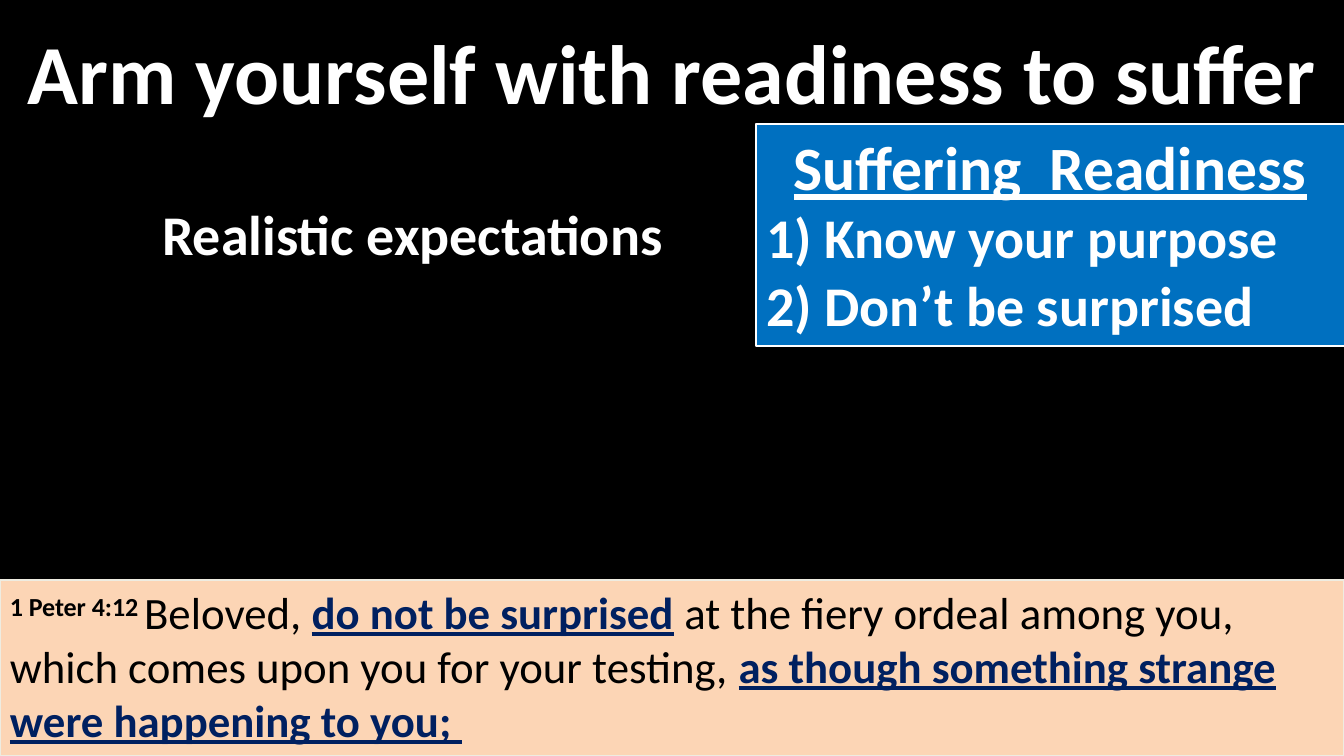
"""Build the slide on readiness to suffer, with its points and Bible verse."""
from dataclasses import dataclass

import pptx
import pptx.dml.color
import pptx.enum.shapes
import pptx.enum.text
import pptx.oxml
import pptx.oxml.ns
import pptx.util

EMU_PER_PX = 914400 / 100.8
FONT = "Calibri"
COLORS = {
    "black": "000000",
    "white": "FFFFFF",
    "navy": "002060",
    "blue": "0070C0",
    "peach": "FCD5B5",
    "cream": "EEECE1",
}
CALLOUT_ADJ = {"adj1": -21900, "adj2": 49600, "adj3": 16700}
ALIGN = pptx.enum.text.PP_ALIGN
ANCHOR = pptx.enum.text.MSO_ANCHOR
SHAPE = pptx.enum.shapes.MSO_SHAPE


@dataclass(frozen=True)
class Run:
    text: str
    size: int
    color: str = "white"
    bold: bool = True
    underline: bool = False
    baseline: int = 0


@dataclass(frozen=True)
class Para:
    runs: tuple[Run, ...]
    align: ALIGN = ALIGN.LEFT


@dataclass(frozen=True)
class Block:
    box: tuple[int, int, int, int]
    paras: tuple[Para, ...]
    anchor: ANCHOR = ANCHOR.TOP
    callout: bool = False
    fill: str = ""
    line: str = ""
    line_width: float = 0


TITLE = Block(
    (0, 29, 1344, 84),
    (Para((Run("Arm yourself with readiness to suffer", 60),), ALIGN.CENTER),),
    ANCHOR.MIDDLE, callout=True,
)
EXPECTATIONS = Block(
    (118, 183, 589, 101),
    (Para((Run("Realistic expectations", 40),), ALIGN.CENTER),),
    ANCHOR.MIDDLE, callout=True,
)
READINESS = Block(
    (756, 124, 589, 222),
    (
        Para((Run("Suffering  Readiness", 44, underline=True),), ALIGN.CENTER),
        Para((Run("1) Know your purpose", 40),)),
        Para((Run("2) Don’t be surprised", 40),)),
    ),
    fill="blue", line="white", line_width=2,
)
VERSE = Block(
    (0, 580, 1344, 176),
    (Para((
        Run("1 Peter 4:12 ", 32, "black", baseline=30000),
        Run("Beloved, ", 32, "black", bold=False),
        Run("do not be surprised", 32, "navy", underline=True),
        Run(" ", 32, "navy"),
        Run("at the fiery ordeal among you, which comes upon you for your testing, ",
            32, "black", bold=False),
        Run("as though something strange were happening to you; ",
            32, "navy", underline=True),
    )),),
    fill="peach", line="cream", line_width=1.5,
)


def px(n: int) -> int:
    """Turn pixels into EMU."""
    return round(n * EMU_PER_PX)


def rgb(name: str) -> pptx.dml.color.RGBColor:
    """Look up a named colour."""
    return pptx.dml.color.RGBColor.from_string(COLORS[name])


def add_run(p, run: Run) -> None:
    """Append one formatted run to a paragraph."""
    r = p.add_run()
    r.text = run.text
    r.font.name = FONT
    r.font.size = pptx.util.Pt(run.size)
    r.font.bold = run.bold
    r.font.underline = run.underline
    r.font.color.rgb = rgb(run.color)
    if run.baseline:
        r.font._element.set("baseline", str(run.baseline))


def set_callout(sp) -> None:
    """Give a shape or placeholder the rounded callout outline."""
    spPr = sp._element.spPr
    for old in spPr.findall(pptx.oxml.ns.qn("a:prstGeom")):
        spPr.remove(old)
    guides = "".join(f'<a:gd name="{name}" fmla="val {value}"/>'
                     for name, value in CALLOUT_ADJ.items())
    spPr.find(pptx.oxml.ns.qn("a:xfrm")).addnext(pptx.oxml.parse_xml(
        f'<a:prstGeom {pptx.oxml.ns.nsdecls("a")} prst="wedgeRoundRectCallout">'
        f"<a:avLst>{guides}</a:avLst></a:prstGeom>"))


def format_block(sp, block: Block) -> None:
    """Place a shape, then set its outline, fill, line and text."""
    sp.left, sp.top, sp.width, sp.height = map(px, block.box)
    if block.callout:
        set_callout(sp)
    if block.fill:
        sp.fill.solid()
        sp.fill.fore_color.rgb = rgb(block.fill)
        sp.line.color.rgb = rgb(block.line)
        sp.line.width = pptx.util.Pt(block.line_width)
    else:
        sp.fill.background()
        sp.line.fill.background()
    tf = sp.text_frame
    tf.word_wrap = True
    tf.auto_size = pptx.enum.text.MSO_AUTO_SIZE.NONE
    tf.vertical_anchor = block.anchor
    for i, para in enumerate(block.paras):
        p = tf.add_paragraph() if i else tf.paragraphs[0]
        p.alignment = para.align
        p.space_before = pptx.util.Pt(0)
        pPr = p._p.get_or_add_pPr()
        pPr.set("marL", "0")
        pPr.set("indent", "0")
        pPr.append(pptx.oxml.parse_xml(
            f"<a:buNone {pptx.oxml.ns.nsdecls('a')}/>"))
        for run in para.runs:
            add_run(p, run)


def add_block(s, block: Block) -> None:
    """Add a shape without a shadow and format it."""
    kind = SHAPE.ROUNDED_RECTANGULAR_CALLOUT if block.callout else SHAPE.RECTANGLE
    sp = s.shapes.add_shape(kind, *map(px, block.box))
    sp.shadow.inherit = False
    format_block(sp, block)


def main() -> None:
    """Build and save the slide."""
    prs = pptx.Presentation()
    prs.slide_width, prs.slide_height = px(1344), px(756)
    s = prs.slides.add_slide(prs.slide_layouts[1])
    s.background.fill.solid()
    s.background.fill.fore_color.rgb = rgb("black")

    format_block(s.shapes.title, TITLE)
    format_block(s.placeholders[1], READINESS)
    add_block(s, VERSE)
    add_block(s, EXPECTATIONS)
    prs.save("out.pptx")


if __name__ == "__main__":
    main()
